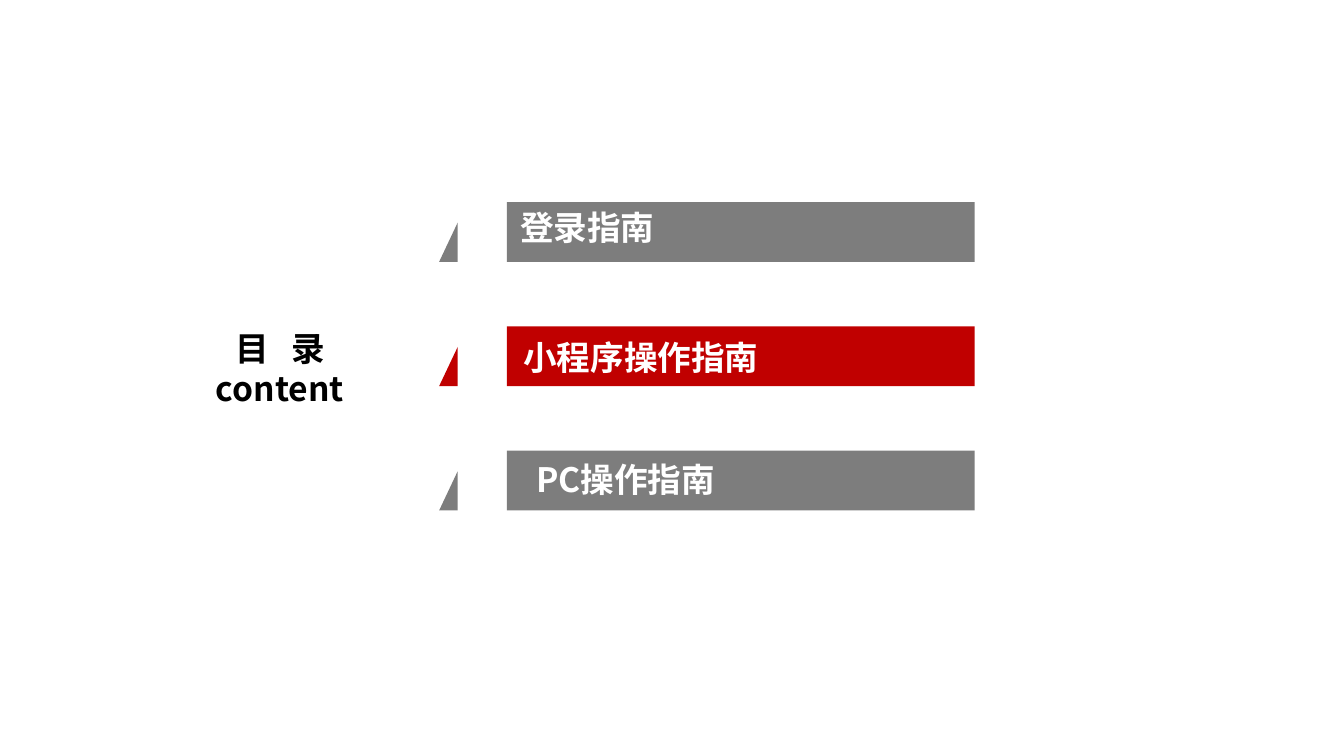
import pptx
import pptx.util
import pptx.dml.color
import pptx.enum.text
import pptx.oxml
import pptx.oxml.ns

Cm, Pt = pptx.util.Cm, pptx.util.Pt
RGB = pptx.dml.color.RGBColor

# Title runs: (text, extra letter spacing in hundredths of a point)
TITLE_LINES = [[("目 ", 400), ("录", 0)], [("content", 0)]]

# (label, colour name, left indent in cm, space before in points)
SECTIONS = [
    ("登录指南", "muted", 0, 0),
    ("小程序操作指南", "active", 0.06, 48),
    ("PC操作指南", "muted", 0.3, 43.5),
]

THEME = {
    "font": "Noto Sans CJK SC",
    "size": Pt(18),
    "title_leading": Pt(21.6),
    "title": RGB(0x00, 0x00, 0x00),
    "label": RGB(0xFF, 0xFF, 0xFF),
    "muted": RGB(0x7D, 0x7D, 0x7D),
    "active": RGB(0xC0, 0x00, 0x00),
}

# Geometry in cm
TITLE_BOX = (2.71, 6.18, 5.16, 1.55)
LIST_BOX = (9.83, 3.92, 8.5, 7)
FIRST_TOP, PITCH = 3.82, 2.35
BAR_LEFT, BAR_RIGHT, BAR_HEIGHT = 9.58, 18.42, 1.13
MARK_LEFT, MARK_RIGHT, MARK_HEIGHT = 8.3, 8.65, 0.74


def set_all(target, values):
    for name, value in values.items():
        setattr(target, name, value)


def prepare(placeholder, box, anchor):
    set_all(placeholder, dict(zip(("left", "top", "width", "height"), map(Cm, box))))
    frame = placeholder.text_frame
    set_all(frame, {
        "margin_left": 0, "margin_top": 0, "margin_right": 0, "margin_bottom": 0,
        "word_wrap": True, "vertical_anchor": anchor,
        "auto_size": pptx.enum.text.MSO_AUTO_SIZE.NONE,
    })
    return frame


def paragraph_at(frame, index):
    return frame.paragraphs[0] if index == 0 else frame.add_paragraph()


def add_run(paragraph, text, color):
    run = paragraph.add_run()
    run.text = text
    set_all(run.font, {"name": THEME["font"], "size": THEME["size"], "bold": True})
    run.font.color.rgb = THEME[color]
    properties = run.font._element
    east_asian = pptx.oxml.parse_xml(
        f'<a:ea {pptx.oxml.ns.nsdecls("a")} typeface="{THEME["font"]}"/>')
    properties.find(pptx.oxml.ns.qn("a:latin")).addnext(east_asian)
    return properties


def add_title(slide):
    frame = prepare(slide.shapes.title, TITLE_BOX, pptx.enum.text.MSO_ANCHOR.MIDDLE)
    for index, line in enumerate(TITLE_LINES):
        paragraph = paragraph_at(frame, index)
        set_all(paragraph, {
            "alignment": pptx.enum.text.PP_ALIGN.CENTER,
            "line_spacing": THEME["title_leading"], "space_before": Pt(0),
        })
        for text, spacing in line:
            properties = add_run(paragraph, text, "title")
            if spacing:
                properties.set("spc", str(spacing))


def add_bar(slide, top, color):
    """Draw a section bar and its corner mark as one outline."""
    bottom = top + BAR_HEIGHT
    mark = [(MARK_RIGHT, bottom - MARK_HEIGHT), (MARK_RIGHT, bottom), (MARK_LEFT, bottom)]
    bar = [(BAR_LEFT, top), (BAR_RIGHT, top), (BAR_RIGHT, bottom), (BAR_LEFT, bottom)]
    mark, bar = ([(Cm(x), Cm(y)) for x, y in points] for points in (mark, bar))
    builder = slide.shapes.build_freeform(*mark[0])
    builder.add_line_segments(mark[1:], close=True)
    builder.move_to(*bar[0])
    builder.add_line_segments(bar[1:], close=True)
    outline = builder.convert_to_shape()
    outline.shadow.inherit = False
    outline.fill.solid()
    outline.fill.fore_color.rgb = THEME[color]
    outline.line.fill.background()


def add_sections(slide):
    labels = slide.placeholders[1]
    frame = prepare(labels, LIST_BOX, pptx.enum.text.MSO_ANCHOR.TOP)
    for index, (label, color, indent, gap) in enumerate(SECTIONS):
        add_bar(slide, FIRST_TOP + index * PITCH, color)
        paragraph = paragraph_at(frame, index)
        set_all(paragraph, {
            "alignment": pptx.enum.text.PP_ALIGN.LEFT,
            "line_spacing": 1.0, "space_before": Pt(gap),
        })
        properties = paragraph._p.get_or_add_pPr()
        properties.set("marL", str(Cm(indent)))
        properties.set("indent", "0")
        properties.append(pptx.oxml.parse_xml(
            f'<a:buNone {pptx.oxml.ns.nsdecls("a")}/>'))
        add_run(paragraph, label, "label")
    # Labels go in front of the bars
    labels.element.getparent().append(labels.element)


def main():
    deck = pptx.Presentation()
    set_all(deck, {"slide_width": Cm(25.4), "slide_height": Cm(14.29)})
    slide = deck.slides.add_slide(deck.slide_layouts[1])
    add_title(slide)
    add_sections(slide)
    deck.save("out.pptx")


if __name__ == "__main__":
    main()
